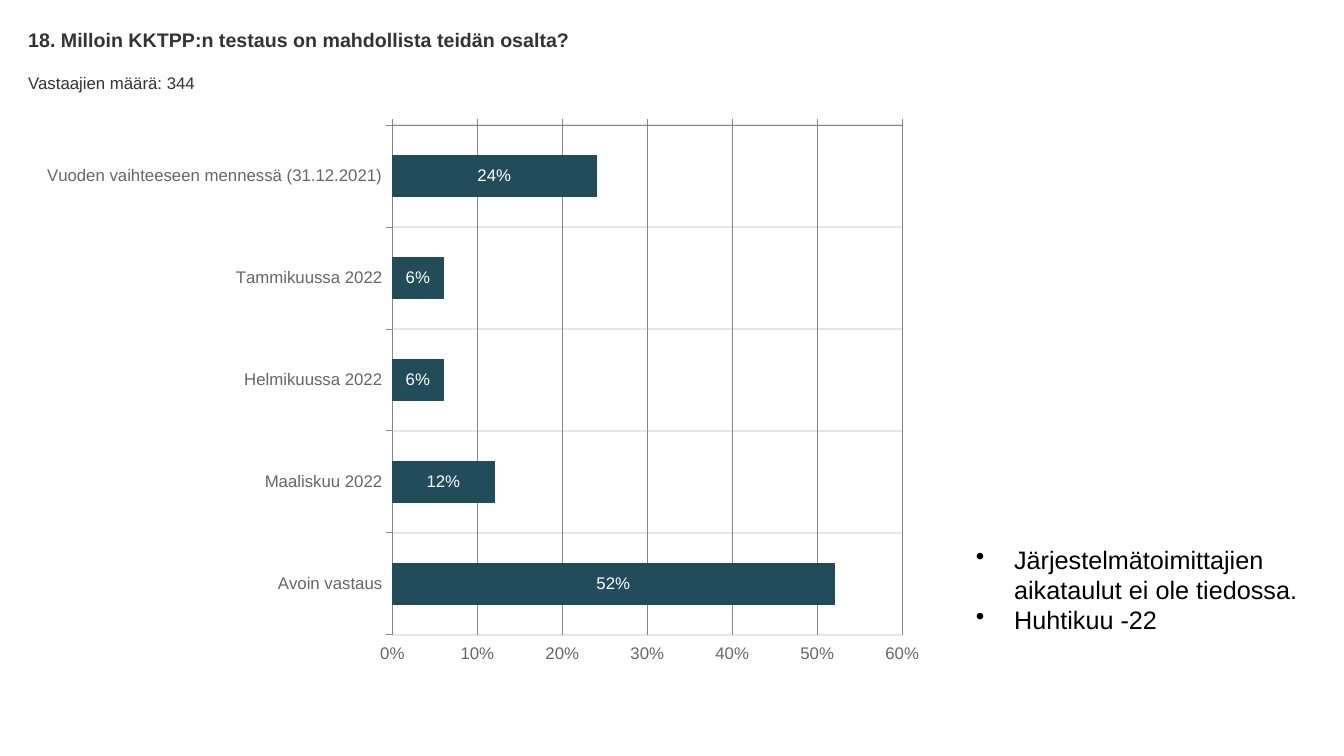
from lxml import etree
from pptx import Presentation
from pptx import util as u
from pptx.chart.data import CategoryChartData
from pptx.dml.color import RGBColor
from pptx.enum import chart as c, text
from pptx.oxml import parse_xml
from pptx.oxml.ns import nsdecls, qn


def color(value):
    return RGBColor.from_string(value)


def add_text(page, place, lines, size, shade, bold=False, margin=0, bullet=False):
    box = page.shapes.add_textbox(*[u.Inches(length) for length in place])
    frame = box.text_frame
    frame.word_wrap = True
    frame.auto_size = text.MSO_AUTO_SIZE.SHAPE_TO_FIT_TEXT
    frame.margin_left = frame.margin_right = u.Inches(margin)
    frame.margin_top = frame.margin_bottom = u.Inches(margin / 2)
    for index, line in enumerate(lines):
        para = frame.add_paragraph() if index else frame.paragraphs[0]
        para.text = line
        if bullet:
            properties = para._p.get_or_add_pPr()
            properties.set("marL", str(u.Inches(0.38)))
            properties.set("indent", str(u.Inches(-0.38)))
            etree.SubElement(properties, qn("a:buChar")).set("char", "•")
        para.font.name = "Arial"
        para.font.size = u.Pt(size)
        para.font.bold = bold
        para.font.color.rgb = color(shade)


deck = Presentation()
deck.slide_width = u.Inches(13.33)
deck.slide_height = u.Inches(7.5)
page = deck.slides.add_slide(deck.slide_layouts[6])

add_text(page, (0.28, 0.28, 12.79, 0.23),
         ["18. Milloin KKTPP:n testaus on mahdollista teidän osalta?"], 14, "333333", bold=True)
add_text(page, (0.28, 0.72, 12.79, 0.2), ["Vastaajien määrä: 344"], 12, "333333")

answers = CategoryChartData(number_format="0%")
answers.categories = ["Vuoden vaihteeseen mennessä (31.12.2021)", "Tammikuussa 2022",
                      "Helmikuussa 2022", "Maaliskuu 2022", "Avoin vastaus"]
answers.add_series("Series 1", [0.24, 0.06, 0.06, 0.12, 0.52])
chart = page.shapes.add_chart(c.XL_CHART_TYPE.BAR_CLUSTERED, u.Inches(0.28), u.Inches(1.13),
                              u.Inches(9.03), u.Inches(5.56), answers).chart
chart.has_legend = False
chart.has_title = False
chart.font.name = "Arial"
chart.font.size = u.Pt(14)

category_axis, value_axis = chart.category_axis, chart.value_axis
category_axis.reverse_order = True
category_axis.tick_label_position = c.XL_TICK_LABEL_POSITION.LOW
value_axis.tick_label_position = c.XL_TICK_LABEL_POSITION.HIGH
value_axis.minimum_scale = 0
value_axis.maximum_scale = 0.6
value_axis.major_unit = 0.1
value_axis.tick_labels.number_format = "0%"
value_axis.tick_labels.number_format_is_linked = False
for axis, grid, width in ((category_axis, "E6E6E6", 1), (value_axis, "868686", 0.75)):
    axis.major_tick_mark = c.XL_TICK_MARK.OUTSIDE
    axis.minor_tick_mark = c.XL_TICK_MARK.NONE
    axis.has_major_gridlines = True
    axis.major_gridlines.format.line.color.rgb = color(grid)
    axis.major_gridlines.format.line.width = u.Pt(width)
    axis.format.line.color.rgb = color("868686")
    axis.format.line.width = u.Pt(0.75)
    font = axis.tick_labels.font
    font.name = "Arial"
    font.size = u.Pt(12)
    font.color.rgb = color("666666")

plot = chart.plots[0]
plot.gap_width = 150
plot.vary_by_categories = False
bars = plot.series[0]
bars.format.fill.solid()
bars.format.fill.fore_color.rgb = color("234C5A")
bars.format.line.color.rgb = color("234C5A")
bars.format.line.width = u.Pt(0.75)
plot.has_data_labels = True
labels = plot.data_labels
labels.show_value = True
labels.number_format = "0%"
labels.number_format_is_linked = False
labels.position = c.XL_LABEL_POSITION.CENTER
labels.font.name = "Arial"
labels.font.size = u.Pt(12)
labels.font.color.rgb = color("FFFFFF")

plot_area = chart._chartSpace.chart.plotArea
for layout in plot_area.findall(qn("c:layout")):
    plot_area.remove(layout)
plot_area.insert(0, parse_xml(
    f'<c:layout {nsdecls("c")}><c:manualLayout><c:layoutTarget val="inner"/>'
    '<c:xMode val="edge"/><c:yMode val="edge"/><c:x val="0.4"/><c:y val="0.02"/>'
    '<c:w val="0.56"/><c:h val="0.91"/></c:manualLayout></c:layout>'))

add_text(page, (9.58, 5.35, 3.49, 1.01),
         ["Järjestelmätoimittajien aikataulut ei ole tiedossa.", "Huhtikuu -22"],
         18, "000000", margin=0.1, bullet=True)

deck.save("out.pptx")
